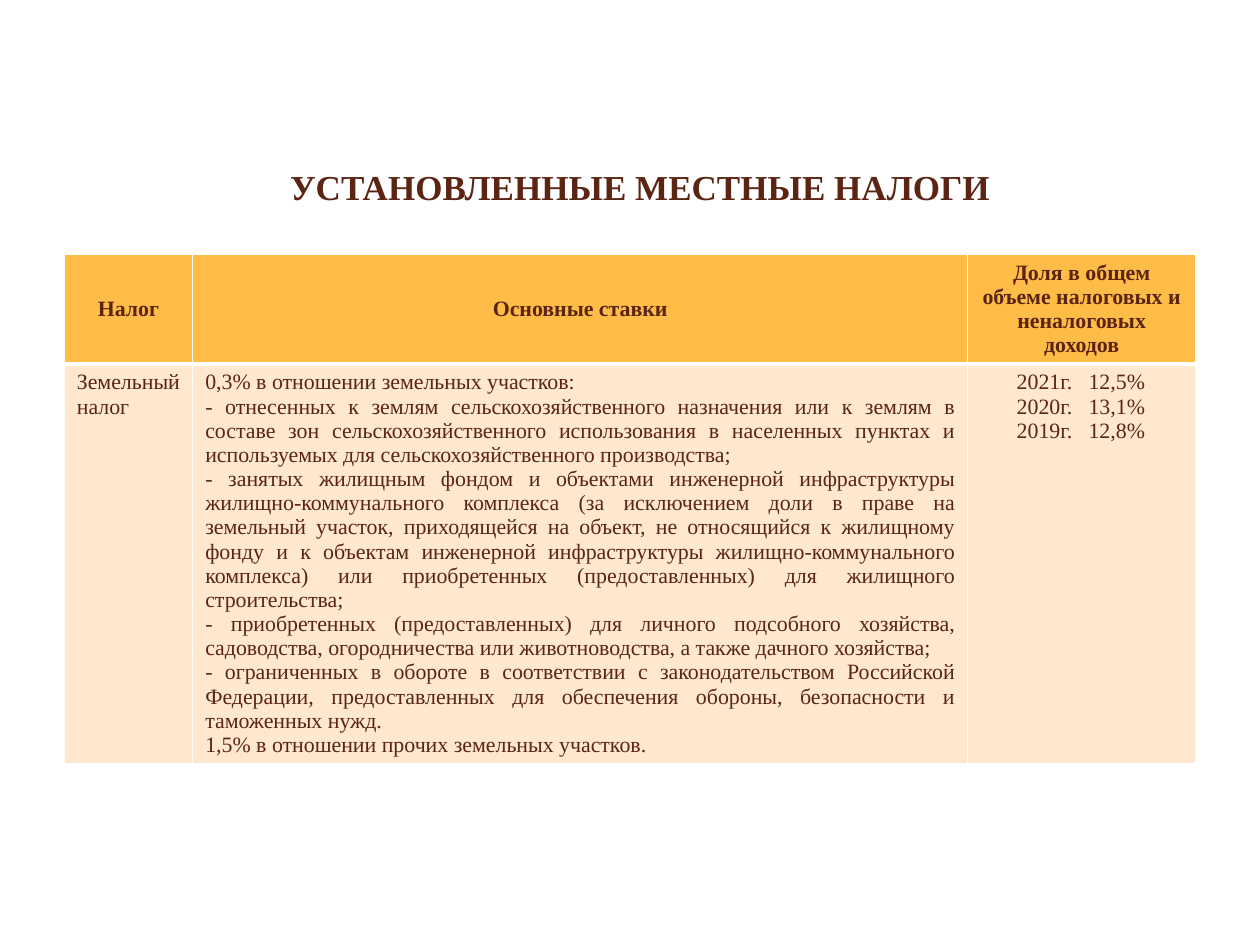
from lxml.etree import SubElement
from pptx import Presentation
from pptx.dml.color import RGBColor
from pptx.enum.text import MSO_ANCHOR, PP_ALIGN
from pptx.oxml.ns import qn
from pptx.util import Inches, Pt

COLORS = {"text": "5B2413", "header": "FFBD47", "body": "FFE8CF", "border": "FFFFFF"}
FONT = "Times New Roman"
TITLE = "УСТАНОВЛЕННЫЕ МЕСТНЫЕ НАЛОГИ"
HEADERS = ["Налог", "Основные ставки", "Доля в общем объеме налоговых и неналоговых доходов"]
RATES = [
    "0,3% в отношении земельных участков:",
    "- отнесенных к землям сельскохозяйственного назначения или к землям в составе зон "
    "сельскохозяйственного использования в населенных пунктах и используемых для "
    "сельскохозяйственного производства;",
    "- занятых жилищным фондом и объектами инженерной инфраструктуры жилищно-коммунального "
    "комплекса (за исключением доли в праве на земельный участок, приходящейся на объект, "
    "не относящийся к жилищному фонду и к объектам инженерной инфраструктуры "
    "жилищно-коммунального комплекса) или приобретенных (предоставленных) для жилищного "
    "строительства;",
    "- приобретенных (предоставленных) для личного подсобного хозяйства, садоводства, "
    "огородничества или животноводства, а также дачного хозяйства;",
    "- ограниченных в обороте в соответствии с законодательством Российской Федерации, "
    "предоставленных для обеспечения обороны, безопасности и таможенных нужд.",
    "1,5% в отношении прочих земельных участков.",
]
SHARES = [("2021г.", "12,5%"), ("2020г.", "13,1%"), ("2019г.", "12,8%")]
COL_WIDTHS = [1.02, 6.15, 1.81]
ROW_HEIGHTS = [0.87, 3.15]


def set_attrs(obj, values):
    for name, value in values.items():
        setattr(obj, name, value)


def write(tf, lines, size, bold=False, align=PP_ALIGN.LEFT, tab=None):
    for i, line in enumerate(lines):
        p = tf.paragraphs[0] if i == 0 else tf.add_paragraph()
        p.alignment = align
        if tab:
            tabs = SubElement(p._p.get_or_add_pPr(), qn("a:tabLst"))
            SubElement(tabs, qn("a:tab"), pos=str(Inches(tab)), algn="l")
        r = p.add_run()
        r.text = line
        set_attrs(r.font, {"name": FONT, "size": Pt(size), "bold": bold})
        r.font.color.rgb = RGBColor.from_string(COLORS["text"])


def set_borders(cell, bottom):
    tc_pr = cell._tc.get_or_add_tcPr()
    for i, (side, width) in enumerate(zip("LRTB", (1, 1, 1, bottom))):
        ln = tc_pr.makeelement(qn(f"a:ln{side}"), {"w": str(Pt(width))})
        fill = SubElement(ln, qn("a:solidFill"))
        SubElement(fill, qn("a:srgbClr"), val=COLORS["border"])
        tc_pr.insert(i, ln)


def style_cell(cell, color, bottom=1):
    cell.fill.solid()
    cell.fill.fore_color.rgb = RGBColor.from_string(COLORS[color])
    set_borders(cell, bottom)


def add_title(s):
    sp = s.shapes.title
    box = {"left": 1.38, "top": 1.15, "width": 7.4, "height": 0.71}
    set_attrs(sp, {name: Inches(value) for name, value in box.items()})
    tf = sp.text_frame
    tf.vertical_anchor = MSO_ANCHOR.MIDDLE
    write(tf, [TITLE], 20, bold=True, align=PP_ALIGN.CENTER)
    tf.paragraphs[0].line_spacing = 0.9


def add_tax_table(s):
    table = s.shapes.add_table(
        len(ROW_HEIGHTS), len(COL_WIDTHS), Inches(0.51), Inches(2.02),
        Inches(sum(COL_WIDTHS)), Inches(sum(ROW_HEIGHTS)),
    ).table
    for col, width in zip(table.columns, COL_WIDTHS):
        col.width = Inches(width)
    for row, height in zip(table.rows, ROW_HEIGHTS):
        row.height = Inches(height)

    anchors = [MSO_ANCHOR.MIDDLE, MSO_ANCHOR.MIDDLE, MSO_ANCHOR.TOP]
    for cell, text, anchor in zip(table.rows[0].cells, HEADERS, anchors):
        style_cell(cell, "header", bottom=3)
        cell.vertical_anchor = anchor
        write(cell.text_frame, [text], 12.5, bold=True, align=PP_ALIGN.CENTER)

    tax, rates, shares = table.rows[1].cells
    for cell in (tax, rates, shares):
        style_cell(cell, "body")
    write(tax.text_frame, ["Земельный налог"], 12.5)
    write(rates.text_frame, RATES, 12.5, align=PP_ALIGN.JUSTIFY)
    rates.text_frame.paragraphs[0].alignment = PP_ALIGN.LEFT
    shares.margin_left = Inches(0.39)
    write(shares.text_frame, ["\t".join(share) for share in SHARES], 12.5, tab=0.57)


def main():
    prs = Presentation()
    set_attrs(prs, {"slide_width": Inches(10), "slide_height": Inches(7.5)})
    s = prs.slides.add_slide(prs.slide_layouts[5])
    add_tax_table(s)
    add_title(s)
    prs.save("out.pptx")


if __name__ == "__main__":
    main()
